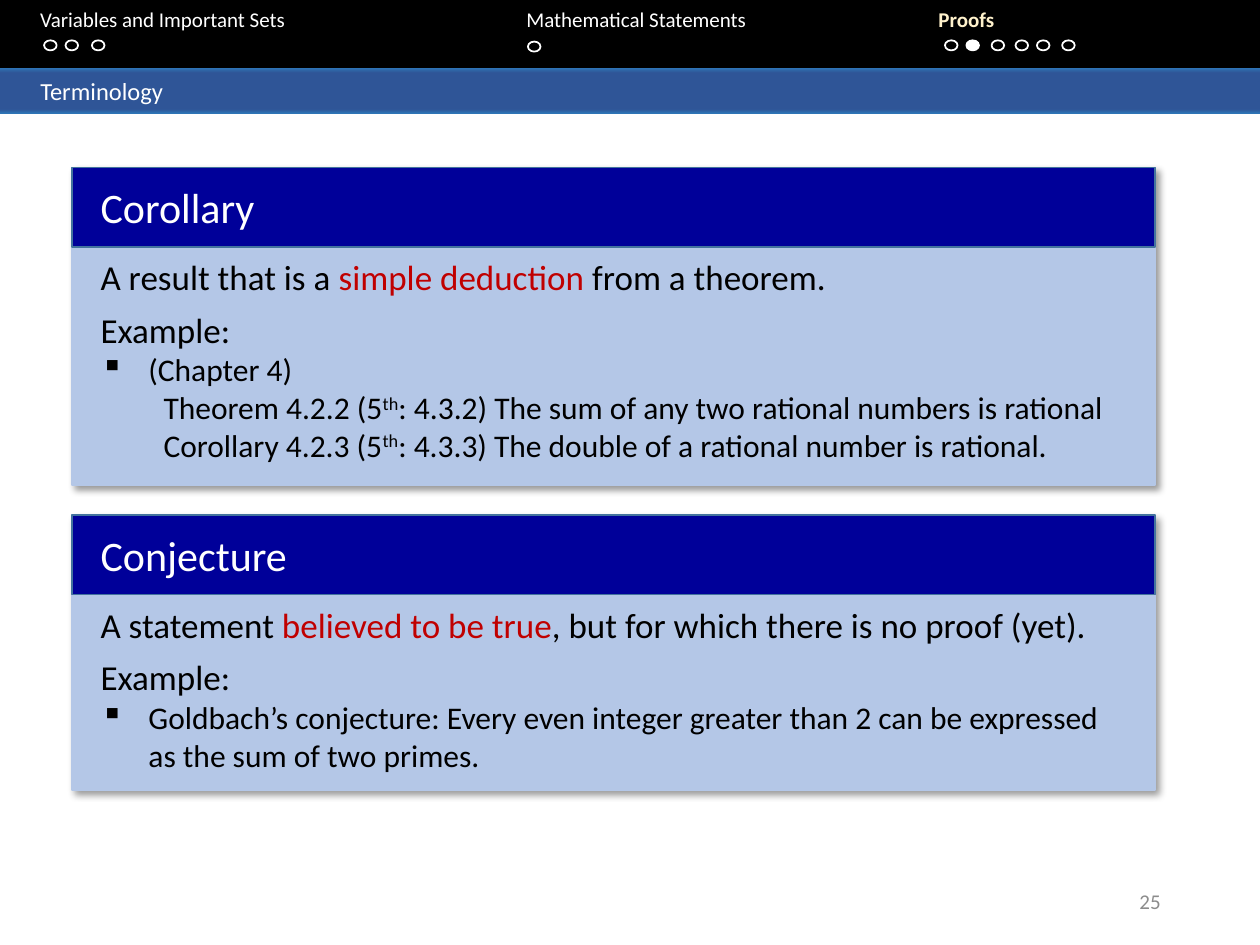
from copy import deepcopy

from lxml.etree import SubElement
from pptx import Presentation
from pptx.dml.color import RGBColor
from pptx.enum.shapes import MSO_SHAPE
from pptx.enum.text import MSO_ANCHOR, PP_ALIGN
from pptx.oxml import parse_xml
from pptx.oxml.ns import nsdecls, qn
from pptx.util import Inches, Pt

SHADOW = (
    f'<a:effectLst {nsdecls("a")}><a:outerShdw blurRad="50800" dist="38100" dir="2700000" '
    'algn="tl" rotWithShape="0"><a:srgbClr val="000000"><a:alpha val="40000"/></a:srgbClr>'
    "</a:outerShdw></a:effectLst>"
)


def color(hex_text):
    return RGBColor.from_string(hex_text)


def add_block(shapes, kind, left, top, width, height, fill=None, line=None):
    """Add a preset shape without shadow; fill and line are hex colours or None."""
    block = shapes.add_shape(kind, Inches(left), Inches(top), Inches(width), Inches(height))
    block.shadow.inherit = False
    if fill:
        block.fill.solid()
        block.fill.fore_color.rgb = color(fill)
    else:
        block.fill.background()
    if line:
        block.line.color.rgb = color(line)
        block.line.width = Pt(1)
    else:
        block.line.fill.background()
    return block


deck = Presentation()
deck.slide_width, deck.slide_height = Inches(10), Inches(7.5)
page = deck.slides.add_slide(deck.slide_layouts[6])

# Navigation bar
add_block(page.shapes, MSO_SHAPE.RECTANGLE, 0, -0.02, 10, 0.56, "000000")
box = page.shapes.add_textbox(0, 0, Inches(10), Inches(0.5))
box.text_frame.word_wrap = True
para = box.text_frame.paragraphs[0]
para.font.name, para.font.size = "Calibri", Pt(12)
tabs = SubElement(para._p.get_or_add_pPr(), qn("a:tabLst"))
para._p.pPr.insert(0, tabs)  # tab stops come before the default font
sections = [
    (0.22, "Variables and Important Sets", "FFFFFF"),
    (4.08, "Mathematical Statements", "FFFFFF"),
    (7.35, "Proofs", "FFF2CC"),
]
for stop, name, ink in sections:
    SubElement(tabs, qn("a:tab"), pos=str(Inches(stop)), algn="l")
    span = para.add_run()
    span.text = "\t" + name
    span.font.color.rgb = color(ink)
span.font.bold = True

dot_rows = [
    (0.32, [0.35, 0.52, 0.73]),
    (0.33, [4.19]),
    (0.32, [7.5, 7.67, 7.87, 8.06, 8.23, 8.43]),
]
current_dot = 7.67
for top, lefts in dot_rows:
    for left in lefts:
        fill = "FFFFFF" if left == current_dot else None
        add_block(page.shapes, MSO_SHAPE.OVAL, left, top, 0.1, 0.08, fill, "FFFFFF")

# Title bar
bar = add_block(page.shapes, MSO_SHAPE.RECTANGLE, 0, 0.54, 10, 0.36)
bar.fill.gradient()
stop_list = bar._element.spPr.find(qn("a:gradFill")).find(qn("a:gsLst"))
for _ in range(2):
    stop_list.append(deepcopy(stop_list[0]))
bar_stops = [(0, "2E75B6"), (0.11, "2F5597"), (0.91, "2F5597"), (1, "2E75B6")]
for stop, (position, ink) in zip(bar.fill.gradient_stops, bar_stops):
    stop.position = position
    stop.color.rgb = color(ink)
bar.fill.gradient_angle = 270
bar.text_frame.margin_left = Inches(0.32)
bar.text_frame.vertical_anchor = MSO_ANCHOR.MIDDLE
para = bar.text_frame.paragraphs[0]
para.text = "Terminology"
para.alignment = PP_ALIGN.LEFT
para.font.name, para.font.size = "Calibri", Pt(14)
para.font.color.rgb = color("FFFFFF")

# Definition cards: each line is (style, spans), each span is (text, look)
styles = {"definition": 20, "example": 20, "bullet": 18, "detail": 18}
cards = [
    (1.33, 2.52, "Corollary", [
        ("definition", [("A result that is a ", ""), ("simple deduction ", "key"),
                        ("from a theorem.", "")]),
        ("example", [("Example:", "")]),
        ("bullet", [("(Chapter 4)", "")]),
        ("detail", [("Theorem 4.2.2 (5", ""), ("th", "super"),
                    (": 4.3.2) The sum of any two rational numbers is rational", "")]),
        ("detail", [("Corollary 4.2.3 (5", ""), ("th", "super"),
                    (": 4.3.3) The double of a rational number is rational.", "")]),
    ]),
    (4.09, 2.18, "Conjecture", [
        ("definition", [("A statement ", ""), ("believed to be true", "key"),
                        (", but for which there is no proof (yet).", "")]),
        ("example", [("Example:", "")]),
        ("bullet", [("Goldbach’s conjecture: Every even integer greater than 2 can be "
                     "expressed as the sum of two primes.", "")]),
    ]),
]
for top, height, heading, lines in cards:
    card = page.shapes.add_group_shape().shapes
    panel = add_block(card, MSO_SHAPE.RECTANGLE, 0.57, top, 8.6, height, "B4C7E7", "B4C7E7")
    properties = panel._element.spPr
    properties.replace(properties.find(qn("a:effectLst")), parse_xml(SHADOW))
    add_block(card, MSO_SHAPE.RECTANGLE, 0.57, top, 8.6, 0.63, "000099", "43739E")

    box = card.add_textbox(Inches(0.7), Inches(top + 0.06), Inches(4.63), Inches(0.5))
    box.text_frame.word_wrap = True
    para = box.text_frame.paragraphs[0]
    para.text = heading
    para.font.name, para.font.size = "Calibri", Pt(24)
    para.font.color.rgb = color("FFFFFF")

    box = card.add_textbox(Inches(0.7), Inches(top + 0.65), Inches(8.34), Inches(height - 0.75))
    frame = box.text_frame
    frame.word_wrap = True
    for number, (style, spans) in enumerate(lines):
        para = frame.add_paragraph() if number else frame.paragraphs[0]
        para.font.name, para.font.size = "Calibri", Pt(styles[style])
        para.font.color.rgb = color("000000")
        layout = para._p.get_or_add_pPr()
        if style == "definition":
            para.space_after = Pt(6)
        elif style == "detail":
            layout.set("marL", str(Inches(0.5)))
        elif style == "bullet":
            layout.set("marL", str(Inches(0.38)))
            layout.set("indent", str(Inches(-0.38)))
            bullet = SubElement(layout, qn("a:buChar"), char="▪")
            layout.insert(0, bullet)
        for text, look in spans:
            span = para.add_run()
            span.text = text
            if look == "key":
                span.font.color.rgb = color("C00000")
            elif look == "super":
                span.font._element.set("baseline", "30000")

# Page number
box = page.shapes.add_textbox(Inches(7.06), Inches(6.95), Inches(2.25), Inches(0.4))
box.text_frame.word_wrap = True
box.text_frame.vertical_anchor = MSO_ANCHOR.MIDDLE
para = box.text_frame.paragraphs[0]
para.text = "25"
para.alignment = PP_ALIGN.RIGHT
para.font.name, para.font.size = "Calibri", Pt(12)
para.font.color.rgb = color("8C8C8C")

deck.save("out.pptx")
